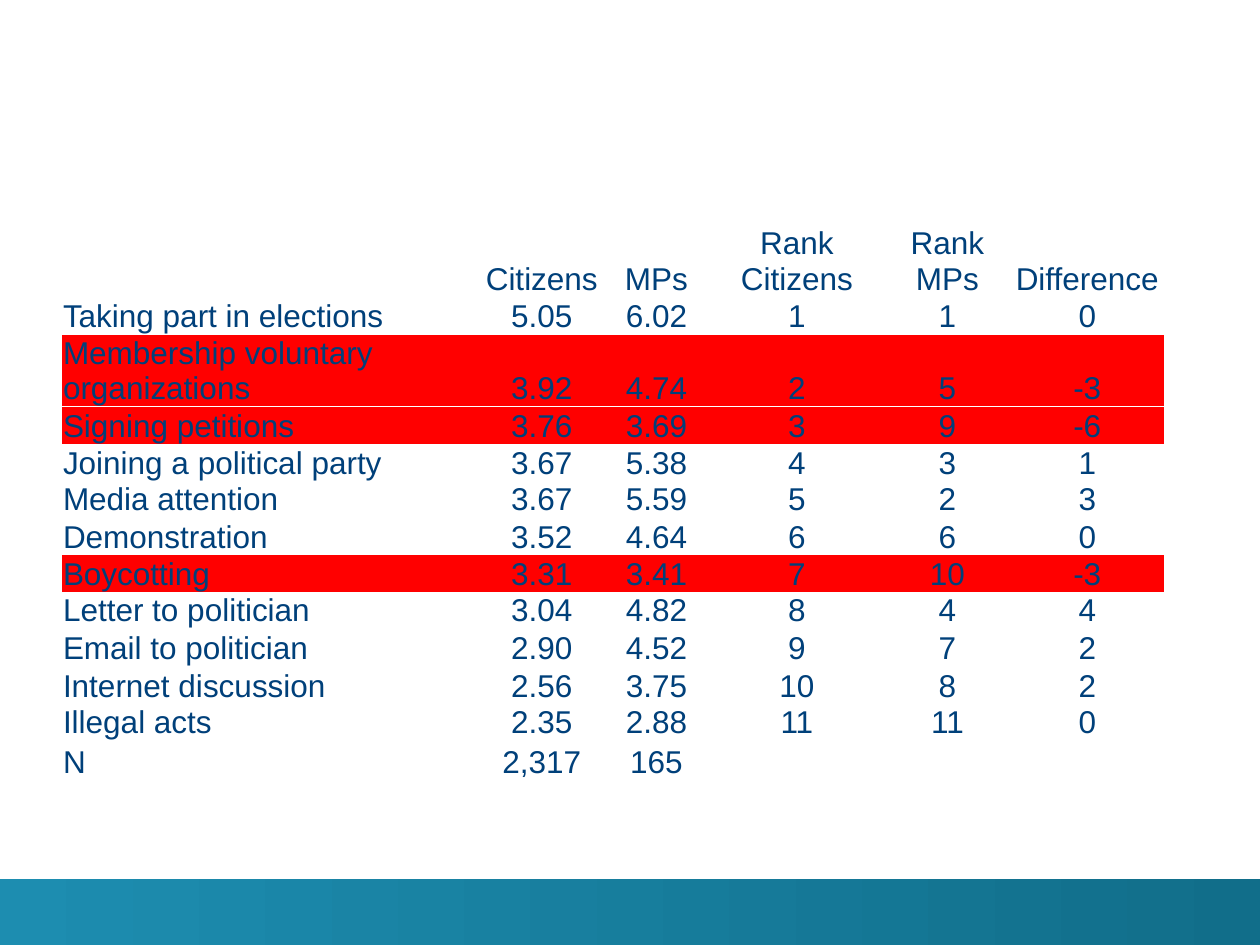
from dataclasses import dataclass

from lxml.etree import SubElement
from pptx import Presentation
from pptx.dml.color import RGBColor
from pptx.enum.shapes import MSO_SHAPE as Shape
from pptx.enum.text import MSO_ANCHOR as Anchor, PP_ALIGN as Align
from pptx.oxml.ns import qn
from pptx.util import Inches, Pt


@dataclass(frozen=True)
class Theme:
    font: str = "Arial"
    size: int = 18
    text: str = "00407A"
    highlight: str = "FF0000"
    rule: str = "FFFFFF"
    rule_width: int = 1
    band: tuple = ("1D8DB0", "116E8A")


THEME = Theme()
PLAIN_STYLE = "{2D5ABB26-0587-4C30-8999-92F81FD0307C}"
BAND_SHARE = 0.07

COLUMN_WIDTHS = (3.32, 0.98, 0.84, 1.39, 1, 1.22)
ROW_HEIGHTS = (0.3, 0.3, 0.3, 0.51, 0.3, 0.29, 0.28,
               0.3, 0.26, 0.26, 0.3, 0.3, 0.26, 0.26)
ROWS = (
    ("",) * 6,
    ("", "Citizens", "MPs", "Rank Citizens", "Rank MPs", "Difference"),
    ("Taking part in elections", "5.05", "6.02", "1", "1", "0"),
    ("Membership voluntary organizations", "3.92", "4.74", "2", "5", "-3"),
    ("Signing petitions", "3.76", "3.69", "3", "9", "-6"),
    ("Joining a political party", "3.67", "5.38", "4", "3", "1"),
    ("Media attention", "3.67", "5.59", "5", "2", "3"),
    ("Demonstration", "3.52", "4.64", "6", "6", "0"),
    ("Boycotting", "3.31", "3.41", "7", "10", "-3"),
    ("Letter to politician", "3.04", "4.82", "8", "4", "4"),
    ("Email to politician", "2.90", "4.52", "9", "7", "2"),
    ("Internet discussion", "2.56", "3.75", "10", "8", "2"),
    ("Illegal acts", "2.35", "2.88", "11", "11", "0"),
    ("N", "2,317", "165", "", "", ""),
)
RULED_EDGES = {0, 1, 2, 3, 13, 14}

CELL_FORMAT = {
    "margin_left": Inches(0.01),
    "margin_right": Inches(0.01),
    "margin_top": Inches(0.01),
    "margin_bottom": 0,
    "vertical_anchor": Anchor.BOTTOM,
}
FONT_FORMAT = {"name": THEME.font, "size": Pt(THEME.size)}


def set_format(target, values):
    for name, value in values.items():
        setattr(target, name, value)


def add_footer_band(slide, width, height):
    band_height = int(height * BAND_SHARE)
    band = slide.shapes.add_shape(
        Shape.RECTANGLE, 0, height - band_height, width, band_height)
    band.shadow.inherit = False
    band.line.fill.background()
    band.fill.gradient()
    band.fill.gradient_angle = 0
    for stop, color in zip(band.fill.gradient_stops, THEME.band):
        stop.color.rgb = RGBColor.from_string(color)


def add_rules(cell, row_index):
    """Draw the cell's top and bottom edges where the table is ruled."""
    properties = cell._tc.get_or_add_tcPr()
    sides = [tag for tag, edge in (("a:lnT", row_index), ("a:lnB", row_index + 1))
             if edge in RULED_EDGES]
    for position, tag in enumerate(sides):
        line = SubElement(properties, qn(tag), w=str(Pt(THEME.rule_width)))
        fill = SubElement(line, qn("a:solidFill"))
        SubElement(fill, qn("a:srgbClr"), val=THEME.rule)
        properties.insert(position, line)


def fill_cell(cell, text, centered, highlighted):
    set_format(cell, CELL_FORMAT)
    if highlighted:
        cell.fill.solid()
        cell.fill.fore_color.rgb = RGBColor.from_string(THEME.highlight)
    else:
        cell.fill.background()
    if text:
        para = cell.text_frame.paragraphs[0]
        para.alignment = Align.CENTER if centered else Align.LEFT
        span = para.add_run()
        span.text = text
        set_format(span.font, FONT_FORMAT)
        span.font.color.rgb = RGBColor.from_string(THEME.text)


def is_highlighted(row):
    """Rows that MPs rank at least three places lower than citizens do."""
    return row[-1].startswith("-")


def add_ranking_table(slide):
    frame = slide.shapes.add_table(
        len(ROWS), len(COLUMN_WIDTHS), Inches(0.49), Inches(1.47),
        Inches(sum(COLUMN_WIDTHS)), Inches(sum(ROW_HEIGHTS)))
    table = frame.table
    set_format(table, {"first_row": False, "horz_banding": False})
    next(frame._element.iter(qn("a:tableStyleId"))).text = PLAIN_STYLE
    for column, width in zip(table.columns, COLUMN_WIDTHS):
        column.width = Inches(width)
    for row_index, (row, height) in enumerate(zip(ROWS, ROW_HEIGHTS)):
        table.rows[row_index].height = Inches(height)
        for column_index, text in enumerate(row):
            cell = table.cell(row_index, column_index)
            fill_cell(cell, text, column_index > 0, is_highlighted(row))
            add_rules(cell, row_index)
    frame.height = Inches(4.93)


def main():
    deck = Presentation()
    set_format(deck, {"slide_width": Inches(10), "slide_height": Inches(7.5)})
    slide = deck.slides.add_slide(deck.slide_layouts[6])
    add_footer_band(slide, deck.slide_width, deck.slide_height)
    add_ranking_table(slide)
    deck.save("out.pptx")


if __name__ == "__main__":
    main()
